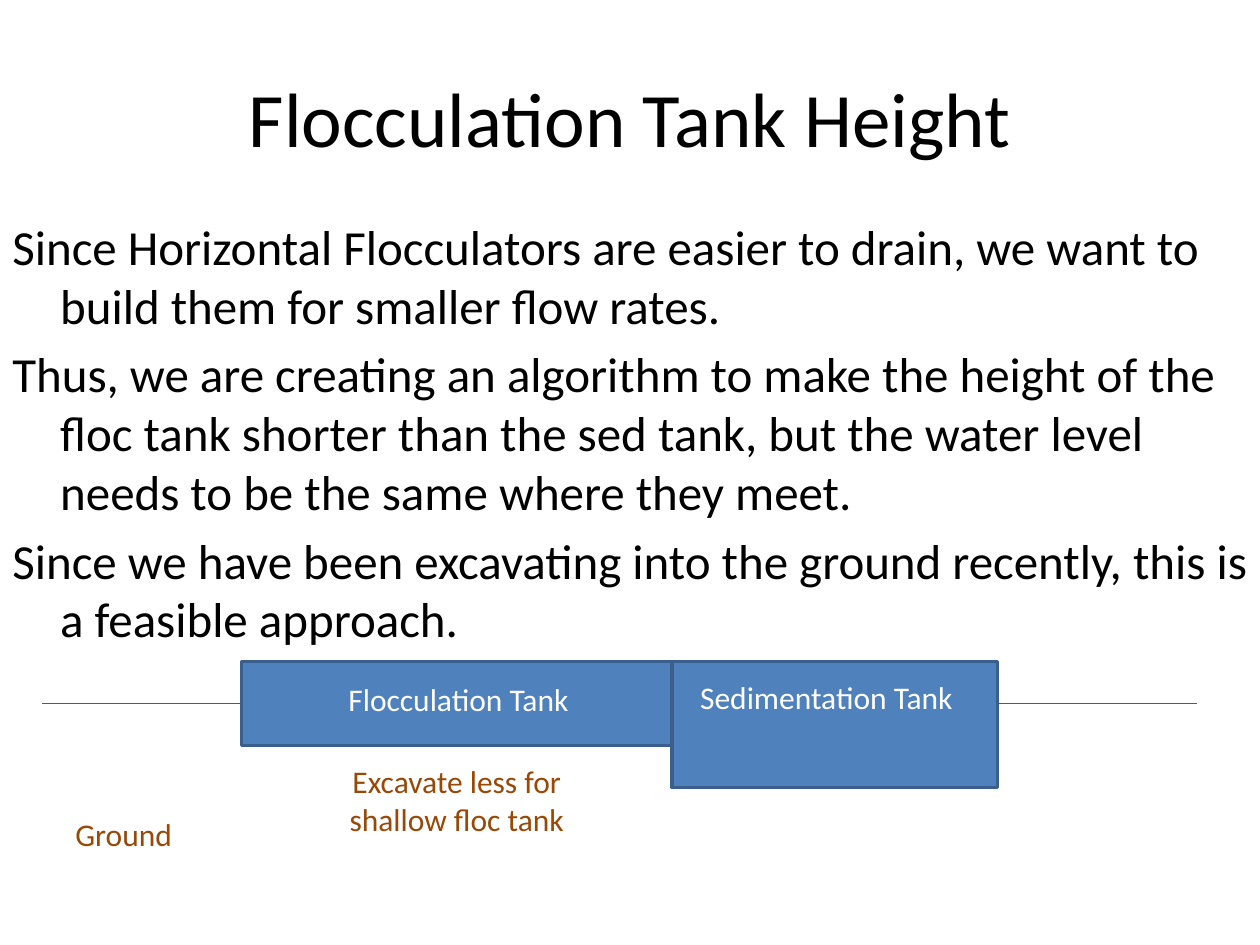
from dataclasses import dataclass

from lxml import etree
from pptx import Presentation
from pptx.dml.color import RGBColor
from pptx.enum.shapes import MSO_CONNECTOR, MSO_SHAPE
from pptx.enum.text import MSO_ANCHOR, PP_ALIGN
from pptx.oxml.ns import qn
from pptx.util import Inches, Pt

RECTANGLE = MSO_SHAPE.RECTANGLE
STRAIGHT = MSO_CONNECTOR.STRAIGHT
MIDDLE = MSO_ANCHOR.MIDDLE
LEFT, CENTER = PP_ALIGN.LEFT, PP_ALIGN.CENTER
LEFT_SIDE = 1
COLUMNS, ROWS = 120, 90
CELL = Inches(10) / COLUMNS


@dataclass(frozen=True)
class Theme:
    font: str = "Calibri"
    ink: RGBColor = RGBColor(0, 0, 0)
    light: RGBColor = RGBColor(255, 255, 255)
    earth: RGBColor = RGBColor.from_string("984807")
    tank: RGBColor = RGBColor.from_string("4F81BD")
    tank_edge: RGBColor = RGBColor.from_string("3A5F8C")
    title_size: int = 44
    body_size: int = 28
    label_size: int = 18


THEME = Theme()

STATEMENTS = (
    "Since Horizontal Flocculators are easier to drain, we want to build them for smaller flow rates.",
    "Thus, we are creating an algorithm to make the height of the floc tank shorter than the sed tank, "
    "but the water level needs to be the same where they meet.",
    "Since we have been excavating into the ground recently, this is a feasible approach.",
)


def grid(*cells):
    return [round(cell * CELL) for cell in cells]


def write(paragraph, text, size, color, align=LEFT):
    paragraph.alignment = align
    run = paragraph.add_run()
    run.text = text
    run.font.name = THEME.font
    run.font.size = Pt(size)
    run.font.color.rgb = color


def set_title(slide, text):
    title = slide.shapes.title
    title.left, title.top, title.width, title.height = grid(6, 3.6, 108, 15)
    title.text_frame.vertical_anchor = MIDDLE
    write(title.text_frame.paragraphs[0], text, THEME.title_size, THEME.ink, CENTER)


def add_text_area(slide, area):
    frame = slide.shapes.add_textbox(*grid(*area)).text_frame
    frame.word_wrap = True
    return frame


def add_statements(slide, statements):
    frame = add_text_area(slide, (0, 20, COLUMNS, 40))
    hanging = Inches(0.38)
    for index, statement in enumerate(statements):
        paragraph = frame.add_paragraph() if index else frame.paragraphs[0]
        write(paragraph, statement, THEME.body_size, THEME.ink)
        paragraph.space_before = Pt(THEME.body_size * 0.2)
        properties = paragraph._p.get_or_add_pPr()
        properties.set("marL", str(hanging))
        properties.set("indent", str(-hanging))


def add_label(slide, text, area, color, align=LEFT):
    frame = add_text_area(slide, area)
    write(frame.paragraphs[0], text, THEME.label_size, color, align)


def add_tank(slide, area):
    tank = slide.shapes.add_shape(RECTANGLE, *grid(*area))
    tank.shadow.inherit = False
    tank.fill.solid()
    tank.fill.fore_color.rgb = THEME.tank
    tank.line.color.rgb = THEME.tank_edge
    tank.line.width = Pt(2)
    return tank


def add_ground_line(slide, start, end, row):
    ground = slide.shapes.add_connector(STRAIGHT, *grid(start, row, end, row))
    ground.line.color.rgb = THEME.earth
    ground.line.width = Pt(0.75)
    etree.SubElement(ground._element.spPr, qn("a:effectLst"))
    return ground


def main():
    deck = Presentation()
    deck.slide_width, deck.slide_height = grid(COLUMNS, ROWS)
    slide = deck.slides.add_slide(deck.slide_layouts[5])
    set_title(slide, "Flocculation Tank Height")
    add_statements(slide, STATEMENTS)

    water_row, ground_row = 63, 67
    add_tank(slide, (64, water_row, 31, 12))
    flocculation_tank = add_tank(slide, (23, water_row, 41, 8))
    add_label(slide, "Flocculation Tank", (32, 64.2, 27, 4.8), THEME.light)
    add_label(slide, "Sedimentation Tank", (65.5, 64, 32.5, 12.5), THEME.light)

    left_ground = add_ground_line(slide, 4, 23, ground_row)
    left_ground.end_connect(flocculation_tank, LEFT_SIDE)
    add_ground_line(slide, 95, 114, ground_row)
    add_label(slide, "Ground", (6, 77, 27, 4.8), THEME.earth)
    add_label(slide, "Excavate less for shallow floc tank", (30, 72, 27, 8.5), THEME.earth, CENTER)

    deck.save("out.pptx")


if __name__ == "__main__":
    main()
